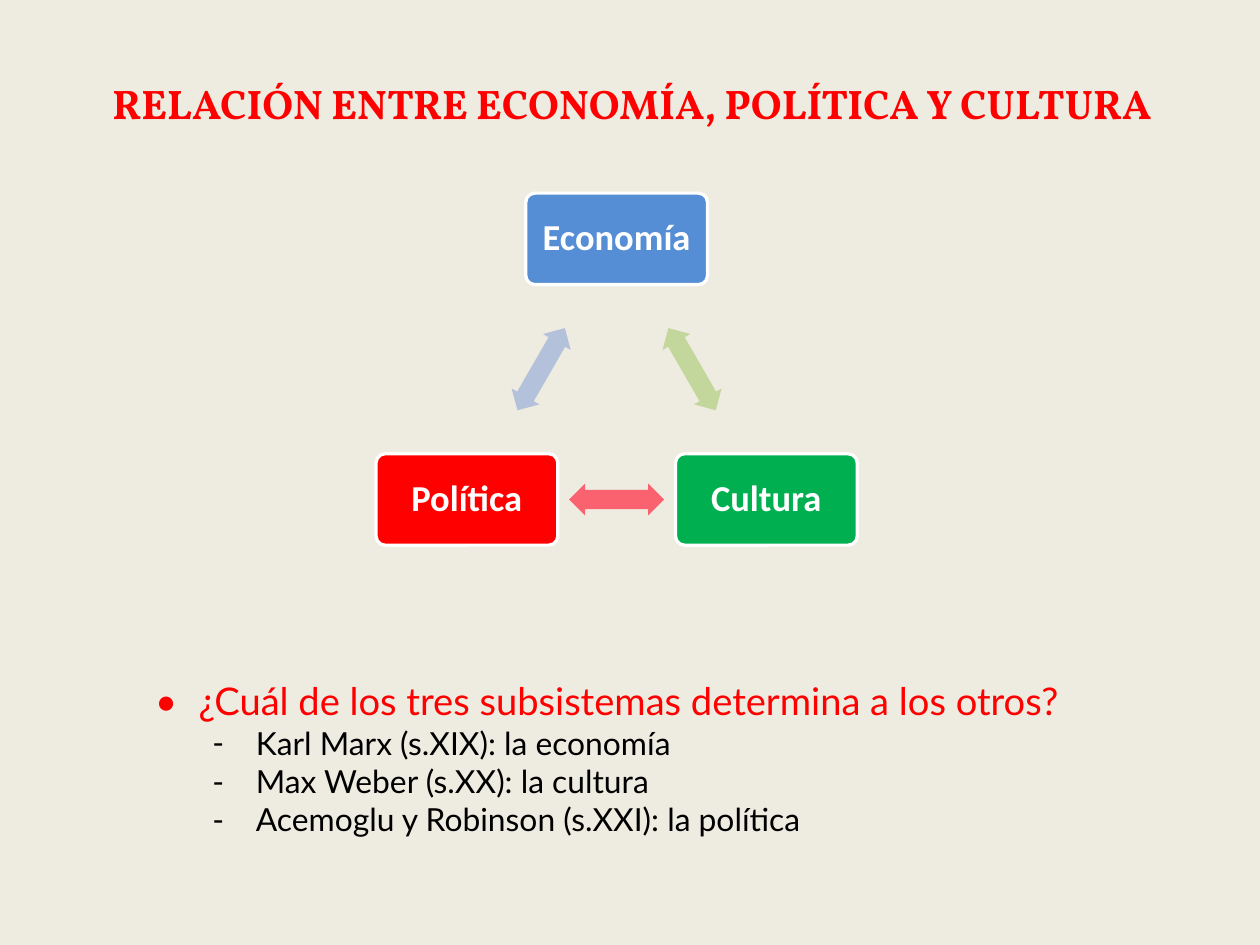
from lxml.etree import SubElement
from pptx import Presentation
from pptx.dml.color import RGBColor
from pptx.enum.shapes import MSO_SHAPE
from pptx.enum.text import MSO_ANCHOR, PP_ALIGN
from pptx.oxml.ns import qn
from pptx.util import Cm, Inches, Pt

BACKGROUND = RGBColor(0xEE, 0xEC, 0xE1)
RED = RGBColor(0xFF, 0x00, 0x00)
BLACK = RGBColor(0x00, 0x00, 0x00)
WHITE = RGBColor(0xFF, 0xFF, 0xFF)
BLUE = RGBColor(0x55, 0x8E, 0xD5)
GREEN = RGBColor(0x00, 0xB0, 0x50)
PALE_GREEN = RGBColor(0xC3, 0xD6, 0x9B)
PALE_RED = RGBColor(0xFA, 0x62, 0x70)
PALE_BLUE = RGBColor(0xB3, 0xC1, 0xDB)

BOX_WIDTH, BOX_HEIGHT = 1.59, 0.8
ARROW_WIDTH, ARROW_HEIGHT = 0.83, 0.28


def write(paragraph, text, name, size, color, bold=False):
    run = paragraph.add_run()
    run.text = text
    for attribute, value in {"name": name, "size": Pt(size), "bold": bold}.items():
        setattr(run.font, attribute, value)
    run.font.color.rgb = color


def set_frame(frame, horizontal, vertical):
    """Centre the text vertically, wrap it and set its margins in inches."""
    settings = {
        "word_wrap": True,
        "vertical_anchor": MSO_ANCHOR.MIDDLE,
        "margin_left": Inches(horizontal),
        "margin_right": Inches(horizontal),
        "margin_top": Inches(vertical),
        "margin_bottom": Inches(vertical),
    }
    for attribute, value in settings.items():
        setattr(frame, attribute, value)


presentation = Presentation()
# The page is metric: 28 by 21 cm
presentation.slide_width = Cm(28)
presentation.slide_height = Cm(21)
slide = presentation.slides.add_slide(presentation.slide_layouts[6])
slide.background.fill.solid()
slide.background.fill.fore_color.rgb = BACKGROUND

# Title
title = slide.shapes.add_textbox(Inches(0.47), Inches(0.66), Inches(10.13), Inches(0.49))
set_frame(title.text_frame, 0, 0)
heading = title.text_frame.paragraphs[0]
heading.alignment = PP_ALIGN.CENTER
write(heading, "RELACIÓN ENTRE ECONOMÍA, POLÍTICA Y CULTURA", "Vollkorn", 26, RED, True)

# Question and answers
question = slide.shapes.add_textbox(Inches(1.26), Inches(5.87), Inches(9.12), Inches(1.52))
set_frame(question.text_frame, 0.1, 0.05)
lines = [
    ("¿Cuál de los tres subsistemas determina a los otros?", 0, "•", 0.38, 24, RED),
    ("Karl Marx (s.XIX): la economía", 1, "-", 0.88, 20, BLACK),
    ("Max Weber (s.XX): la cultura", 1, "-", 0.88, 20, BLACK),
    ("Acemoglu y Robinson (s.XXI): la política", 1, "-", 0.88, 20, BLACK),
]
for index, (text, level, bullet, indent, size, color) in enumerate(lines):
    frame = question.text_frame
    paragraph = frame.add_paragraph() if index else frame.paragraphs[0]
    paragraph.level = level
    properties = paragraph._p.get_or_add_pPr()
    properties.set("marL", str(Inches(indent)))
    properties.set("indent", str(-Inches(0.38)))
    SubElement(properties, qn("a:buFont"), typeface="Lato")
    SubElement(properties, qn("a:buChar"), char=bullet)
    write(paragraph, text, "Lato", size, color)

# Subsystems
subsystems = [
    ("Economía", 4.6, 1.69, BLUE),
    ("Cultura", 5.91, 3.97, GREEN),
    ("Política", 3.29, 3.97, RED),
]
for name, left, top, color in subsystems:
    box = slide.shapes.add_shape(
        MSO_SHAPE.ROUNDED_RECTANGLE,
        Inches(left), Inches(top), Inches(BOX_WIDTH), Inches(BOX_HEIGHT),
    )
    box.adjustments[0] = 0.1
    box.shadow.inherit = False
    box.fill.solid()
    box.fill.fore_color.rgb = color
    box.line.color.rgb = WHITE
    box.line.width = Pt(2)
    set_frame(box.text_frame, 0.05, 0.05)
    label = box.text_frame.paragraphs[0]
    label.alignment = PP_ALIGN.CENTER
    label.line_spacing = 0.9
    write(label, name, "Calibri", 23, WHITE, True)

# Two-way arrows between the subsystems
arrows = [
    (5.64, 3.09, 60, PALE_GREEN),
    (4.98, 4.23, 180, PALE_RED),
    (4.32, 3.09, 300, PALE_BLUE),
]
for left, top, rotation, color in arrows:
    arrow = slide.shapes.add_shape(
        MSO_SHAPE.LEFT_RIGHT_ARROW,
        Inches(left), Inches(top), Inches(ARROW_WIDTH), Inches(ARROW_HEIGHT),
    )
    arrow.adjustments[0] = 0.6
    arrow.adjustments[1] = 0.5
    arrow.rotation = rotation
    arrow.shadow.inherit = False
    arrow.fill.solid()
    arrow.fill.fore_color.rgb = color
    arrow.line.fill.background()

presentation.save("out.pptx")
